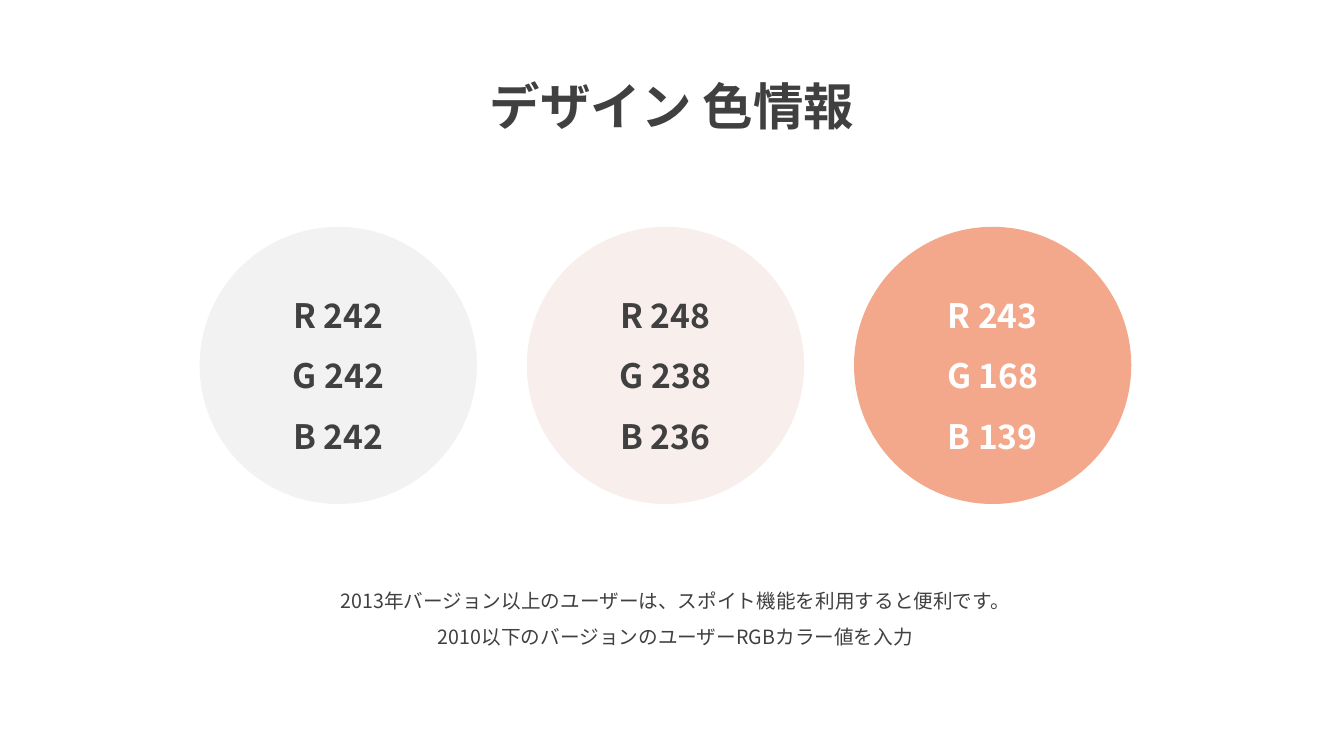
"""Build a slide listing the RGB values of the three design colours."""
import pptx
import pptx.dml.color
import pptx.enum.shapes
import pptx.enum.text
import pptx.oxml.ns
import pptx.util
from lxml import etree

Inches = pptx.util.Inches
RGBColor = pptx.dml.color.RGBColor
FONT = "Noto Sans CJK KR"
DARK = RGBColor(0x40, 0x40, 0x40)
WHITE = RGBColor(0xFF, 0xFF, 0xFF)
SWATCHES = [
    (RGBColor(242, 242, 242), DARK),
    (RGBColor(248, 238, 236), DARK),
    (RGBColor(243, 168, 139), WHITE),
]
DIAMETER = 2.75
PITCH = 3.245
LEFT = 1.98
TOP = 2.25


def write(sp, lines, size, color, bold, anchor):
    """Fill a shape with centred lines of text."""
    tf = sp.text_frame
    tf.word_wrap = True
    tf.vertical_anchor = anchor
    for i, line in enumerate(lines):
        p = tf.paragraphs[0] if i == 0 else tf.add_paragraph()
        p.alignment = pptx.enum.text.PP_ALIGN.CENTER
        p.line_spacing = 1.5
        r = p.add_run()
        r.text = line
        r.font.size = pptx.util.Pt(size)
        r.font.bold = bold
        r.font.color.rgb = color
        r.font.name = FONT
        ea = etree.SubElement(r.font._element, pptx.oxml.ns.qn("a:ea"))
        ea.set("typeface", FONT)


prs = pptx.Presentation()
prs.slide_width = Inches(13.33)
prs.slide_height = Inches(7.5)
s = prs.slides.add_slide(prs.slide_layouts[6])

for col, (fill, ink) in enumerate(SWATCHES):
    sp = s.shapes.add_shape(
        pptx.enum.shapes.MSO_SHAPE.OVAL,
        Inches(LEFT + col * PITCH), Inches(TOP), Inches(DIAMETER), Inches(DIAMETER))
    sp.shadow.inherit = False
    sp.fill.solid()
    sp.fill.fore_color.rgb = fill
    sp.line.fill.background()
    lines = [f"{channel} {value}" for channel, value in zip("RGB", fill)]
    write(sp, lines, 24, ink, True, pptx.enum.text.MSO_ANCHOR.MIDDLE)

title = s.shapes.add_textbox(Inches(4.24), Inches(0.4), Inches(4.85), Inches(0.91))
write(title, ["デザイン 色情報"], 36, DARK, True, pptx.enum.text.MSO_ANCHOR.TOP)

note = s.shapes.add_textbox(Inches(2.52), Inches(5.68), Inches(8.36), Inches(0.77))
write(note, [
    "2013年バージョン以上のユーザーは、スポイト機能を利用すると便利です。",
    "2010以下のバージョンのユーザーRGBカラー値を入力",
], 14, DARK, False, pptx.enum.text.MSO_ANCHOR.TOP)

prs.save("out.pptx")
